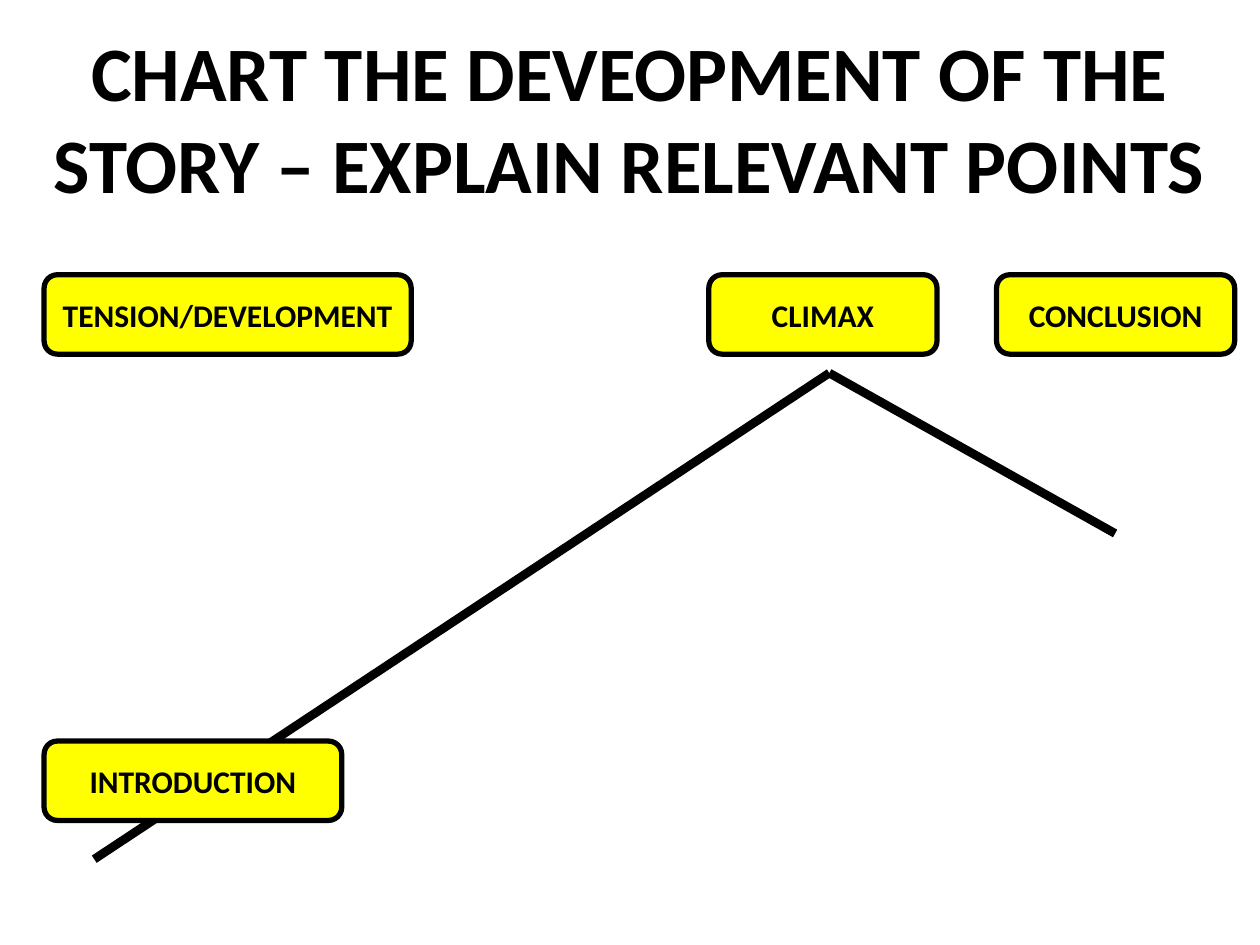
import pptx
import pptx.dml.color
import pptx.enum.shapes
import pptx.enum.text
import pptx.oxml.ns
import pptx.util
from lxml import etree

Cm = pptx.util.Cm
BLACK = pptx.dml.color.RGBColor(0x00, 0x00, 0x00)
YELLOW = pptx.dml.color.RGBColor(0xFF, 0xFF, 0x00)
FONT = "Calibri"


def set_text(shape, text, size):
    """Bold black text in the middle of a shape."""
    frame = shape.text_frame
    frame.word_wrap = True
    frame.vertical_anchor = pptx.enum.text.MSO_ANCHOR.MIDDLE
    para = frame.paragraphs[0]
    para.text = text
    para.alignment = pptx.enum.text.PP_ALIGN.CENTER
    para.font.name = FONT
    para.font.size = pptx.util.Pt(size)
    para.font.bold = True
    para.font.color.rgb = BLACK


def add_title(slide, left, top, width, height):
    box = slide.shapes.add_textbox(Cm(left), Cm(top), Cm(width), Cm(height))
    set_text(box, "CHART THE DEVEOPMENT OF THE STORY – EXPLAIN RELEVANT POINTS", 44)


def add_arc(slide, left, top, width, height):
    """Story line: up from the bottom left to the peak, then part way down."""
    start = (left, top + height)
    peak = (left + 0.72 * width, top)
    end = (left + width, top + 0.33 * height)
    for (x1, y1), (x2, y2) in ((start, peak), (peak, end)):
        line = slide.shapes.add_connector(
            pptx.enum.shapes.MSO_CONNECTOR.STRAIGHT,
            Cm(x1), Cm(y1), Cm(x2), Cm(y2))
        line.line.color.rgb = BLACK
        line.line.width = pptx.util.Pt(5)
        etree.SubElement(line._element.spPr, pptx.oxml.ns.qn("a:effectLst"))


def add_label(slide, text, left, top, width, height):
    label = slide.shapes.add_shape(
        pptx.enum.shapes.MSO_SHAPE.ROUNDED_RECTANGLE,
        Cm(left), Cm(top), Cm(width), Cm(height))
    label.shadow.inherit = False
    label.fill.solid()
    label.fill.fore_color.rgb = YELLOW
    label.line.color.rgb = BLACK
    label.line.width = pptx.util.Pt(3)
    set_text(label, text, 18)


def add_stages(slide, left, top, height):
    """Stage labels: three along the top, the introduction at the foot."""
    stages = (
        # text, offset across, offset down, width
        ("TENSION/DEVELOPMENT", 0, 0, 7.4),
        ("CLIMAX", 13.4, 0, 4.6),
        ("CONCLUSION", 19.2, 0, 4.8),
        ("INTRODUCTION", 0, 9.4, 6),
    )
    for text, across, down, width in stages:
        add_label(slide, text, left + across, top + down, width, height)


def main():
    deck = pptx.Presentation()
    deck.slide_width = Cm(25.4)
    deck.slide_height = Cm(19.05)
    slide = deck.slides.add_slide(deck.slide_layouts[6])
    add_title(slide, 0, 0.76, 25.4, 3.18)
    add_arc(slide, 1.9, 7.52, 20.58, 9.8)
    add_stages(slide, 0.89, 5.54, 1.6)
    deck.save("out.pptx")


if __name__ == "__main__":
    main()
